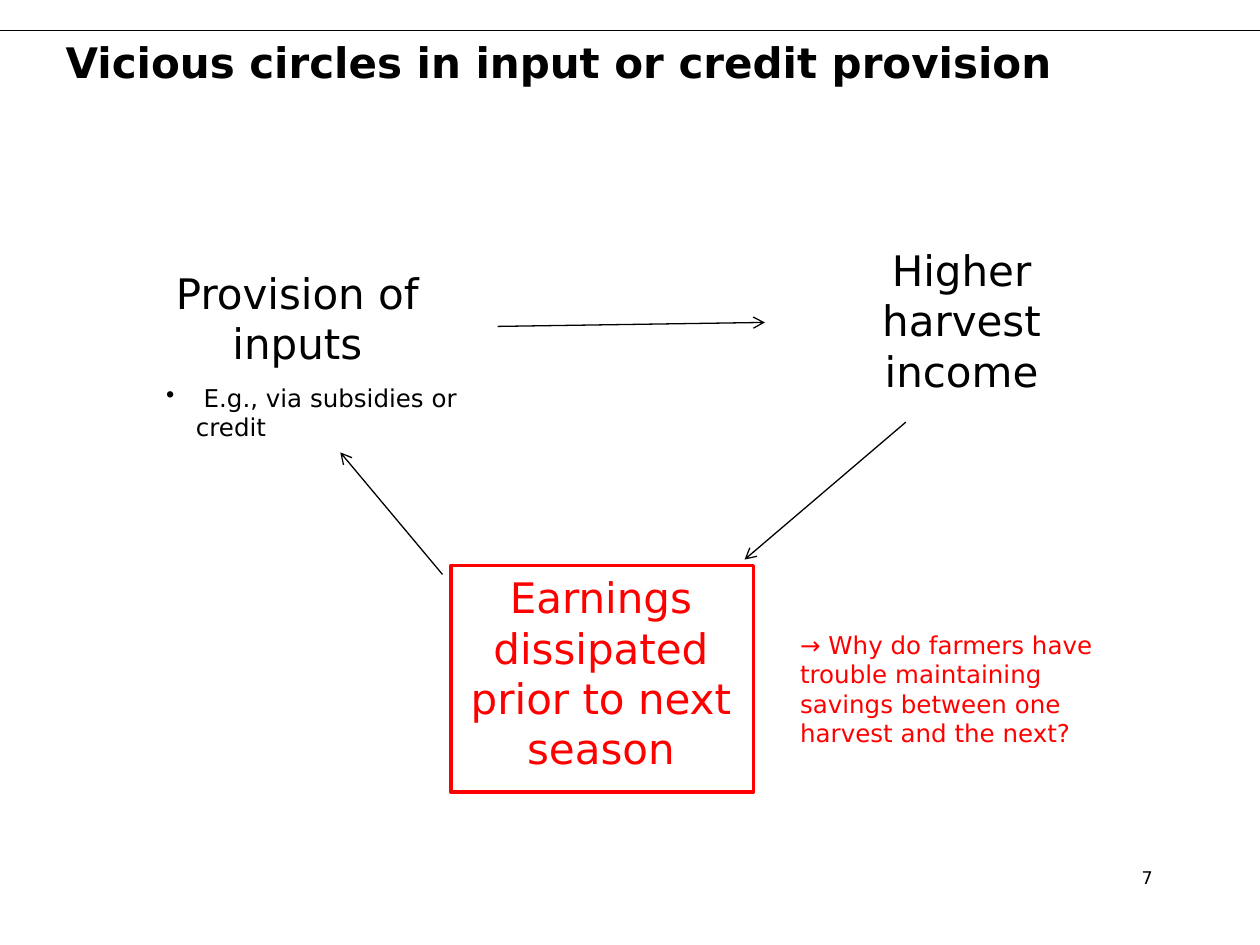
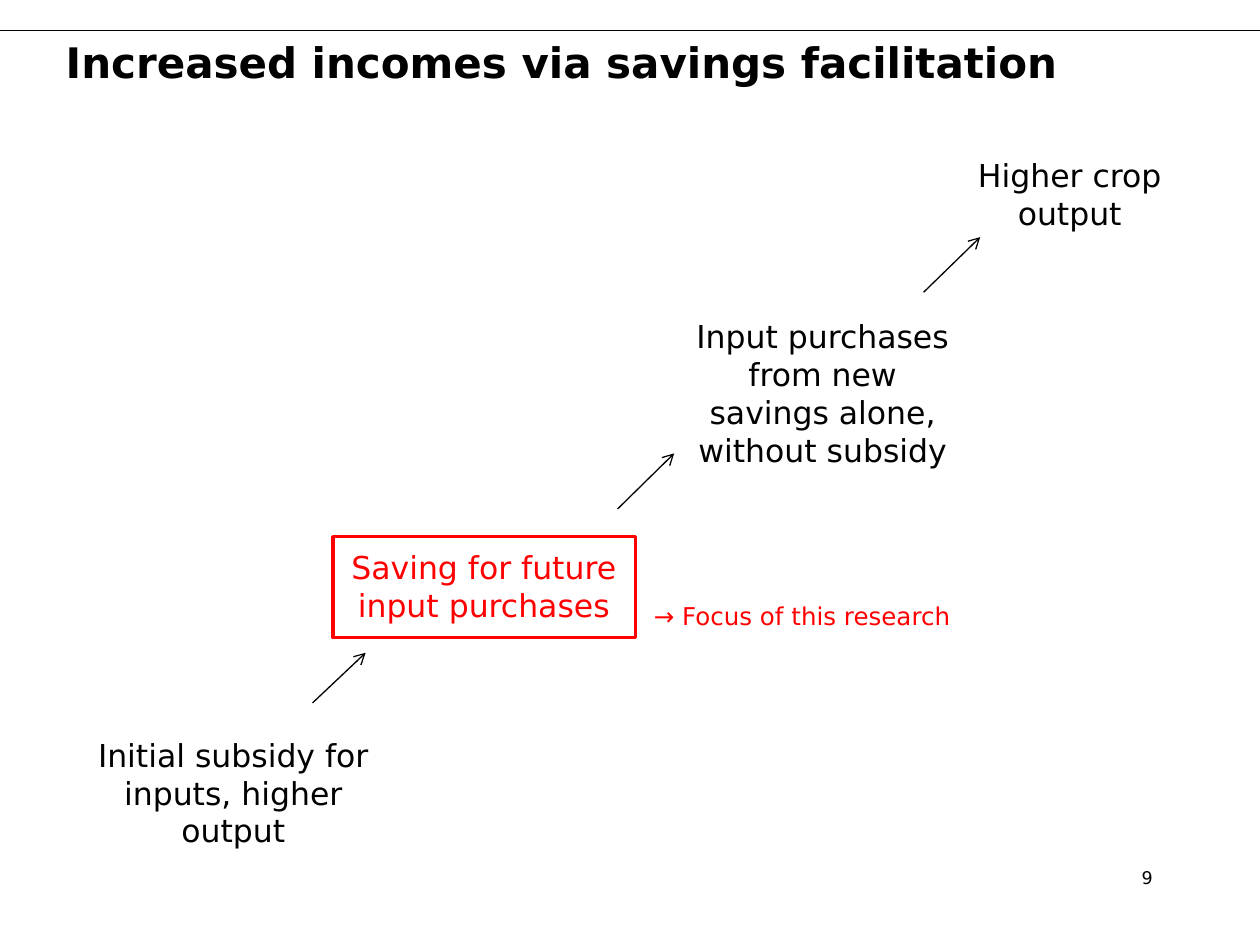
"""Build two slides on input provision and savings facilitation for farmers."""
from dataclasses import dataclass
from typing import Optional

import pptx
import pptx.dml.color
import pptx.enum.shapes
import pptx.enum.text
import pptx.oxml
import pptx.oxml.ns
import pptx.util

Cm = pptx.util.Cm
Pt = pptx.util.Pt
ALIGN = pptx.enum.text.PP_ALIGN
ANCHOR = pptx.enum.text.MSO_ANCHOR
FIT = pptx.enum.text.MSO_AUTO_SIZE

COLORS = {"ink": "000000", "focus": "FF0000"}
FONT = "DejaVu Sans"
SLIDE_WIDTH, SLIDE_HEIGHT = 25.4, 19.05
RULE_TOP = 0.61
STEP_WIDTH, STEP_HEIGHT = 6.05, 1.75
FRAME_WIDTH = 6.1
NOTE_WIDTH = 7.21
NOTE_SIZE = 14
BULLET_INDENT = 0.6


@dataclass(frozen=True)
class Step:
    text: str
    left: float
    top: float
    color: str = "ink"


@dataclass(frozen=True)
class Note:
    text: str
    left: float
    top: float
    height: float
    color: str = "focus"
    bullet: Optional[str] = None


@dataclass(frozen=True)
class Frame:
    left: float
    top: float
    height: float


@dataclass(frozen=True)
class Arrow:
    x1: float
    y1: float
    x2: float
    y2: float


@dataclass(frozen=True)
class Diagram:
    title: str
    page: str
    step_size: int
    steps: tuple[Step, ...]
    arrows: tuple[Arrow, ...]
    frame: Frame
    notes: tuple[Note, ...]


DIAGRAMS = (
    Diagram(
        title="Vicious circles in input or credit provision",
        page="7",
        step_size=24,
        steps=(
            Step("Provision of inputs", 2.97, 5.26),
            Step("Higher harvest income", 16.36, 4.8),
            Step("Earnings dissipated prior to next season", 9.09, 11.4, "focus"),
        ),
        arrows=(
            Arrow(10.03, 6.58, 15.42, 6.5),
            Arrow(18.26, 8.51, 15.01, 11.28),
            Arrow(8.92, 11.58, 6.86, 9.12),
        ),
        frame=Frame(9.09, 11.4, 4.57),
        notes=(
            Note(" E.g., via subsidies or credit", 3.1, 7.59, 1.45, "ink", "•"),
            Note("→ Why do farmers have trouble maintaining savings between "
                 "one harvest and the next?", 15.88, 12.57, 2.64),
        ),
    ),
    Diagram(
        title="Increased incomes via savings facilitation",
        page="9",
        step_size=18,
        steps=(
            Step("Initial subsidy for inputs, higher output", 1.68, 14.71),
            Step("Saving for future input purchases", 6.73, 10.92, "focus"),
            Step("Input purchases from new savings alone, without subsidy", 13.56, 6.27),
            Step("Higher crop output", 18.54, 3.02),
        ),
        arrows=(
            Arrow(6.3, 14.17, 7.37, 13.16),
            Arrow(12.45, 10.26, 13.59, 9.14),
            Arrow(18.62, 5.89, 19.76, 4.78),
        ),
        frame=Frame(6.71, 10.82, 2.03),
        notes=(Note("→ Focus of this research", 12.93, 11.99, 0.86),),
    ),
)


def rgb(color: str) -> pptx.dml.color.RGBColor:
    return pptx.dml.color.RGBColor.from_string(COLORS[color])


def write(shape, text: str, *, size: int, color: str = "ink", bold: bool = False,
          align=ALIGN.LEFT, anchor=ANCHOR.TOP, fit=FIT.NONE,
          bullet: Optional[str] = None) -> None:
    frame = shape.text_frame
    frame.word_wrap = True
    frame.auto_size = fit
    frame.vertical_anchor = anchor
    paragraph = frame.paragraphs[0]
    paragraph.alignment = align
    run = paragraph.add_run()
    run.text = text
    run.font.name = FONT
    run.font.size = Pt(size)
    run.font.bold = bold
    run.font.color.rgb = rgb(color)
    if bullet:
        properties = paragraph._p.get_or_add_pPr()
        properties.set("marL", str(Cm(BULLET_INDENT)))
        properties.set("indent", str(-Cm(BULLET_INDENT)))
        mark = pptx.oxml.parse_xml(
            f'<a:buChar {pptx.oxml.ns.nsdecls("a")} char="{bullet}"/>')
        properties.append(mark)


def add_text(slide, text: str, left: float, top: float, width: float,
             height: float, **text_format) -> None:
    box = slide.shapes.add_textbox(Cm(left), Cm(top), Cm(width), Cm(height))
    write(box, text, **text_format)


def add_line(slide, ends: Arrow, *, arrowhead: bool) -> None:
    line = slide.shapes.add_connector(
        pptx.enum.shapes.MSO_CONNECTOR.STRAIGHT,
        Cm(ends.x1), Cm(ends.y1), Cm(ends.x2), Cm(ends.y2))
    line.line.color.rgb = rgb("ink")
    line.line.width = Pt(0.75)
    namespace = pptx.oxml.ns.nsdecls("a")
    if arrowhead:
        line.line._get_or_add_ln().append(
            pptx.oxml.parse_xml(f'<a:tailEnd {namespace} type="arrow"/>'))
    line._element.spPr.append(pptx.oxml.parse_xml(f"<a:effectLst {namespace}/>"))


def add_frame(slide, frame: Frame) -> None:
    outline = slide.shapes.add_shape(
        pptx.enum.shapes.MSO_SHAPE.RECTANGLE,
        Cm(frame.left), Cm(frame.top), Cm(FRAME_WIDTH), Cm(frame.height))
    outline.shadow.inherit = False
    outline.fill.background()
    outline.line.color.rgb = rgb("focus")
    outline.line.width = Pt(2)


def start_slide(deck, title: str, page: str):
    slide = deck.slides.add_slide(deck.slide_layouts.get_by_name("Title Only"))
    add_line(slide, Arrow(0, RULE_TOP, SLIDE_WIDTH, RULE_TOP), arrowhead=False)
    heading = slide.shapes.title
    heading.left, heading.top = Cm(1.07), Cm(RULE_TOP)
    heading.width, heading.height = Cm(21.59), Cm(1.27)
    write(heading, title, size=24, bold=True, anchor=ANCHOR.MIDDLE)
    add_text(slide, page, 18.21, 17.35, 5.28, 1.27, size=10, align=ALIGN.RIGHT)
    return slide


def add_diagram(deck, diagram: Diagram) -> None:
    slide = start_slide(deck, diagram.title, diagram.page)
    add_frame(slide, diagram.frame)
    for step in diagram.steps:
        add_text(slide, step.text, step.left, step.top, STEP_WIDTH, STEP_HEIGHT,
                 size=diagram.step_size, color=step.color, align=ALIGN.CENTER)
    for arrow in diagram.arrows:
        add_line(slide, arrow, arrowhead=True)
    for note in diagram.notes:
        add_text(slide, note.text, note.left, note.top, NOTE_WIDTH, note.height,
                 size=NOTE_SIZE, color=note.color, bullet=note.bullet,
                 fit=FIT.SHAPE_TO_FIT_TEXT)


def main() -> None:
    deck = pptx.Presentation()
    deck.slide_width, deck.slide_height = Cm(SLIDE_WIDTH), Cm(SLIDE_HEIGHT)
    for diagram in DIAGRAMS:
        add_diagram(deck, diagram)
    deck.save("out.pptx")


if __name__ == "__main__":
    main()
